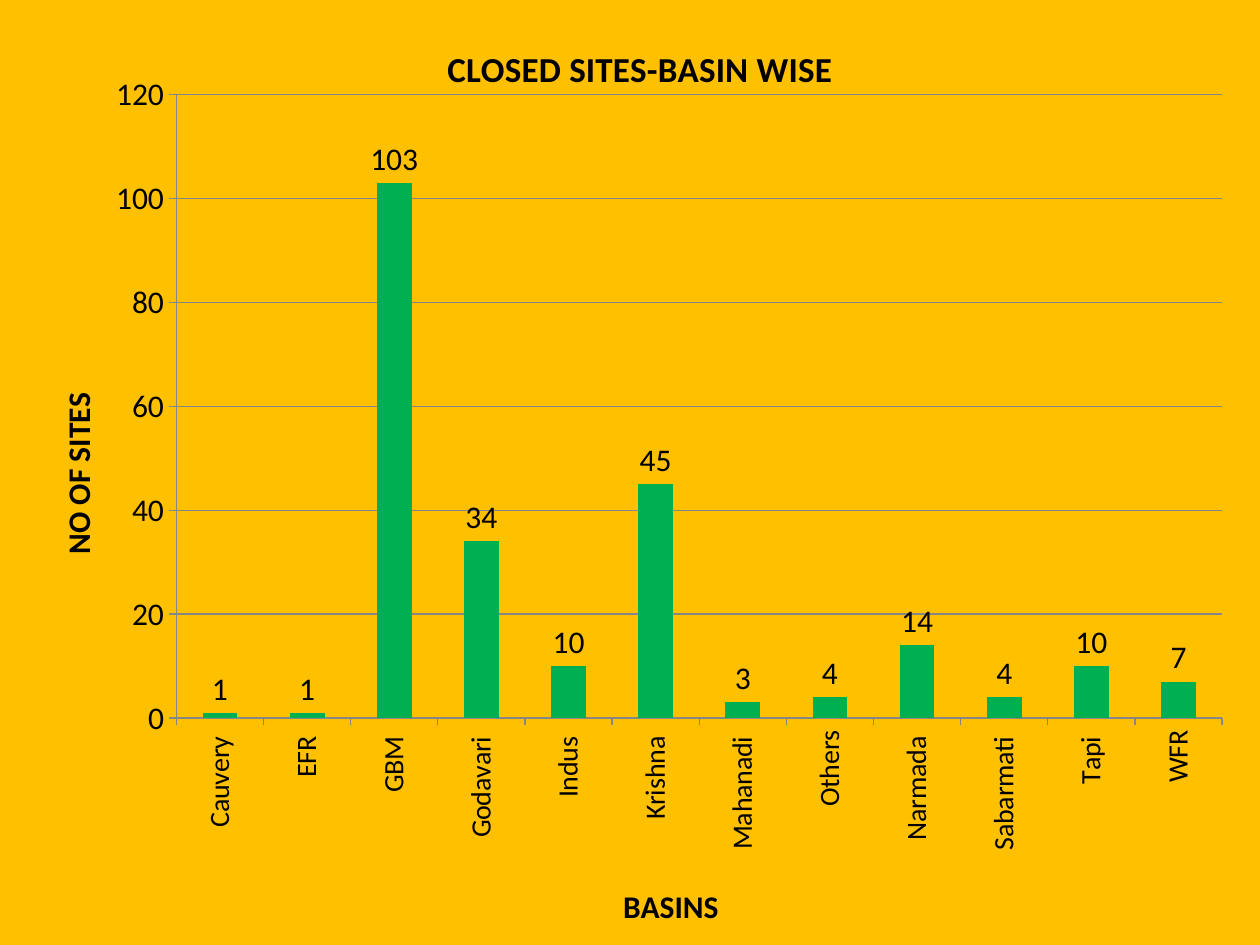
"""Build a one-slide column chart of closed sites per river basin."""
from lxml import etree
from pptx import Presentation
from pptx.chart.data import CategoryChartData
from pptx.dml.color import RGBColor
from pptx.enum import chart as ch
from pptx.oxml import parse_xml
from pptx.oxml.ns import nsdecls, qn
from pptx.util import Pt

SITES = {
    "Cauvery ": 1, "EFR ": 1, "GBM ": 103, "Godavari ": 34,
    "Indus ": 10, "Krishna ": 45, "Mahanadi ": 3, "Others": 4,
    "Narmada ": 14, "Sabarmati ": 4, "Tapi ": 10, "WFR": 7,
}
TITLE = "CLOSED SITES-BASIN WISE"
BASIN_TITLE = "BASINS"
COUNT_TITLE = "NO OF SITES"
WIDTH, HEIGHT = 720, 540
UPWARD = "-5400000"
THEME = {
    "font": "Calibri", "text": "000000", "back": "FFC000",
    "bar": "00B050", "line": "868686",
    "title": 20, "axis_title": 18, "value": 18, "basin": 16, "base": 10,
}


def color(name):
    return RGBColor.from_string(THEME[name])


def style(font, size, bold=False):
    font.name = THEME["font"]
    font.size = Pt(THEME[size])
    font.bold = bold
    font.color.rgb = color("text")


def place(element, **parts):
    for old in element.findall(qn("c:layout")):
        element.remove(old)
    layout = etree.Element(qn("c:layout"))
    manual = etree.SubElement(layout, qn("c:manualLayout"))
    if "w" in parts:
        etree.SubElement(manual, qn("c:layoutTarget"), val="inner")
    for key in ("x", "y"):
        etree.SubElement(manual, qn(f"c:{key}Mode"), val="edge")
    for key, value in parts.items():
        etree.SubElement(manual, qn(f"c:{key}"), val=str(value))
    element.insert(0 if element.find(qn("c:tx")) is None else 1, layout)


def write_title(title, words, size, x, y):
    title.text_frame.text = words
    for r in title.text_frame.paragraphs[0].runs:
        style(r.font, size, bold=True)
    place(title.element, x=x, y=y)


def style_axis(axis, size):
    axis.major_tick_mark = ch.XL_TICK_MARK.OUTSIDE
    axis.minor_tick_mark = ch.XL_TICK_MARK.NONE
    axis.format.line.color.rgb = color("line")
    axis.format.line.width = Pt(0.75)
    style(axis.tick_labels.font, size)


def fill_chart(chart):
    properties = parse_xml(
        f'<c:spPr {nsdecls("c", "a")}><a:solidFill><a:srgbClr val="{THEME["back"]}"/>'
        "</a:solidFill><a:ln><a:noFill/></a:ln></c:spPr>"
    )
    chart.element.find(qn("c:chart")).addnext(properties)


def main():
    prs = Presentation()
    prs.slide_width, prs.slide_height = Pt(WIDTH), Pt(HEIGHT)
    s = prs.slides.add_slide(prs.slide_layouts[6])
    data = CategoryChartData()
    data.categories = list(SITES)
    data.add_series("Series 1", list(SITES.values()))
    chart = s.shapes.add_chart(
        ch.XL_CHART_TYPE.COLUMN_CLUSTERED, 0, 0, Pt(WIDTH), Pt(HEIGHT), data
    ).chart
    style(chart.font, "base")
    fill_chart(chart)
    chart.has_legend = False

    write_title(chart.chart_title, TITLE, "title", 0.35, 0.04)
    chart.chart_title.element.find(qn("c:overlay")).set("val", "1")
    plot_area = next(chart.element.iter(qn("c:plotArea")))
    place(plot_area, x=0.14, y=0.1, w=0.83, h=0.66)

    basins, counts = chart.category_axis, chart.value_axis
    style_axis(basins, "basin")
    style_axis(counts, "value")
    write_title(basins.axis_title, BASIN_TITLE, "axis_title", 0.49, 0.93)
    write_title(counts.axis_title, COUNT_TITLE, "axis_title", 0.04, 0.41)
    basin_labels = plot_area.find(qn("c:catAx")).find(qn("c:txPr"))
    for owner in (basin_labels, counts.axis_title.element):
        body = next(owner.iter(qn("a:bodyPr")))
        body.set("rot", UPWARD)
        body.set("vert", "horz")
    counts.minimum_scale, counts.maximum_scale, counts.major_unit = 0, 120, 20
    counts.has_major_gridlines = True
    counts.major_gridlines.format.line.color.rgb = color("line")
    counts.major_gridlines.format.line.width = Pt(0.75)

    plot = chart.plots[0]
    plot.gap_width = 150
    plot.vary_by_categories = False
    bars = plot.series[0]
    bars.format.fill.solid()
    bars.format.fill.fore_color.rgb = color("bar")
    labels = bars.data_labels
    labels.show_value = True
    labels.position = ch.XL_LABEL_POSITION.OUTSIDE_END
    style(labels.font, "value")
    prs.save("out.pptx")


if __name__ == "__main__":
    main()
